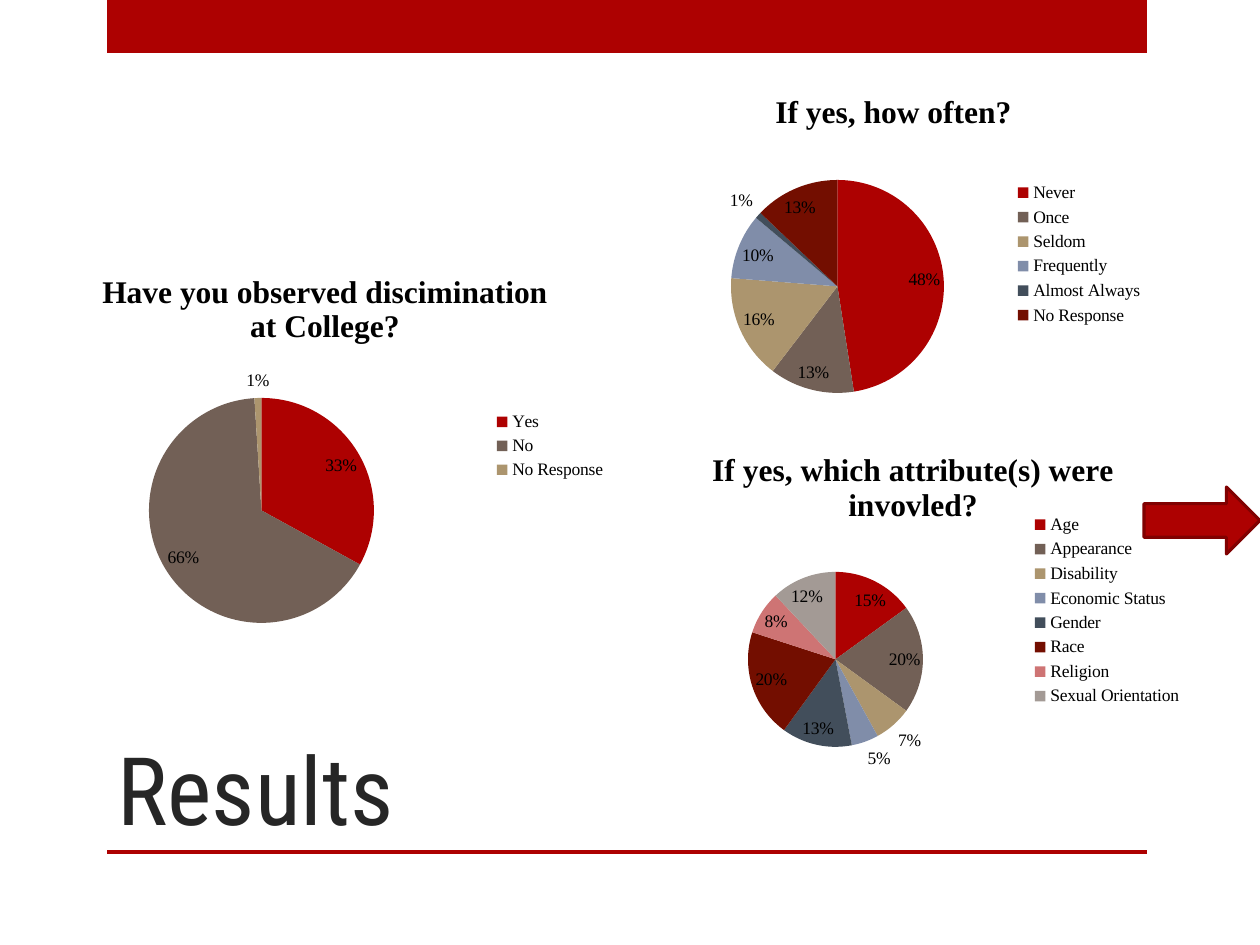
"""Build the survey results slide with three pie charts."""
from dataclasses import dataclass

import lxml.etree
import pptx
import pptx.chart.data
import pptx.dml.color
import pptx.enum.chart
import pptx.enum.shapes
import pptx.enum.text
import pptx.oxml.ns
import pptx.util

RGBColor = pptx.dml.color.RGBColor
RED = RGBColor(0xAD, 0x01, 0x01)
DARK_RED = RGBColor(0x80, 0x01, 0x01)
INK = RGBColor(0x26, 0x26, 0x26)
BLACK = RGBColor(0, 0, 0)
SLICES = (
    RED,
    RGBColor(0x72, 0x60, 0x56),
    RGBColor(0xAC, 0x95, 0x6E),
    RGBColor(0x80, 0x8D, 0xA9),
    RGBColor(0x42, 0x4E, 0x5B),
    RGBColor(0x73, 0x0E, 0x00),
    RGBColor(0xCE, 0x74, 0x74),
    RGBColor(0xA3, 0x9A, 0x95),
)
TITLE_FONT = "Roboto Condensed"
CHART_FONT = "Times New Roman"
PX_PER_INCH = 126


@dataclass(frozen=True)
class Box:
    """A rectangle in px."""

    x: int
    y: int
    w: int
    h: int


@dataclass(frozen=True)
class Pie:
    """A survey question with its answers and the places of its parts."""

    question: str
    answers: dict[str, int]
    frame: Box
    plot: Box
    legend: Box


PIES = (
    Pie(
        "Have you observed discimination at College?",
        {"Yes": 33, "No": 66, "No Response": 1},
        Box(31, 252, 588, 388), Box(149, 398, 225, 225), Box(490, 408, 120, 76),
    ),
    Pie(
        "If yes, how often?",
        {"Never": 48, "Once": 13, "Seldom": 16, "Frequently": 10,
         "Almost Always": 1, "No Response": 13},
        Box(630, 73, 527, 362), Box(731, 180, 213, 213), Box(1009, 178, 140, 152),
    ),
    Pie(
        "If yes, which attribute(s) were invovled?",
        {"Age": 15, "Appearance": 20, "Disability": 7, "Economic Status": 5,
         "Gender": 13, "Race": 20, "Religion": 8, "Sexual Orientation": 12},
        Box(630, 431, 566, 360), Box(748, 572, 175, 175), Box(1027, 510, 160, 201),
    ),
)


def emu(px: int) -> pptx.util.Emu:
    """Turn px into EMU."""
    return pptx.util.Emu(round(px * 914400 / PX_PER_INCH))


def place(box: Box) -> tuple[pptx.util.Emu, ...]:
    """Return left, top, width and height in EMU."""
    return emu(box.x), emu(box.y), emu(box.w), emu(box.h)


def add_block(s, kind, box: Box, line: RGBColor | None = None) -> None:
    """Add a red shape, outlined when a line colour is given."""
    sp = s.shapes.add_shape(kind, *place(box))
    sp.shadow.inherit = False
    sp.fill.solid()
    sp.fill.fore_color.rgb = RED
    if line is None:
        sp.line.fill.background()
    else:
        sp.line.color.rgb = line
        sp.line.width = pptx.util.Pt(1.75)


def set_layout(parent, index: int, part: Box, frame: Box, inner: bool = False) -> None:
    """Fix a chart part at its place within the chart frame."""
    qn = pptx.oxml.ns.qn
    for old in parent.findall(qn("c:layout")):
        parent.remove(old)
    layout = lxml.etree.Element(qn("c:layout"))
    manual = lxml.etree.SubElement(layout, qn("c:manualLayout"))
    values = {
        "xMode": "edge",
        "yMode": "edge",
        "x": (part.x - frame.x) / frame.w,
        "y": (part.y - frame.y) / frame.h,
        "w": part.w / frame.w,
        "h": part.h / frame.h,
    }
    if inner:
        values = {"layoutTarget": "inner", **values}
    for tag, value in values.items():
        lxml.etree.SubElement(manual, qn(f"c:{tag}")).set("val", str(value))
    parent.insert(index, layout)


def add_pie(s, pie: Pie) -> None:
    """Add a pie chart with title, legend and percent labels."""
    data = pptx.chart.data.CategoryChartData()
    data.categories = list(pie.answers)
    data.add_series("Series 1", list(pie.answers.values()))
    chart = s.shapes.add_chart(
        pptx.enum.chart.XL_CHART_TYPE.PIE, *place(pie.frame), data
    ).chart
    chart.font.name = CHART_FONT
    chart.font.size = pptx.util.Pt(10)
    chart.font.color.rgb = BLACK

    chart.has_title = True
    tf = chart.chart_title.text_frame
    tf.text = pie.question
    font = tf.paragraphs[0].runs[0].font
    font.name, font.size, font.bold = CHART_FONT, pptx.util.Pt(18), True
    font.color.rgb = BLACK

    chart.has_legend = True
    chart.legend.position = pptx.enum.chart.XL_LEGEND_POSITION.RIGHT
    chart.legend.include_in_layout = False

    plot = chart.plots[0]
    plot.vary_by_categories = True
    for i, color in enumerate(SLICES[:len(pie.answers)]):
        fill = plot.series[0].points[i].format.fill
        fill.solid()
        fill.fore_color.rgb = color
    plot.has_data_labels = True
    labels = plot.data_labels
    labels.show_value = False
    labels.show_percentage = True
    labels.number_format = "0%"
    labels.number_format_is_linked = False
    labels.position = pptx.enum.chart.XL_LABEL_POSITION.BEST_FIT

    qn = pptx.oxml.ns.qn
    root = chart.element
    set_layout(root.find(f".//{qn('c:plotArea')}"), 0, pie.plot, pie.frame, inner=True)
    set_layout(root.find(f".//{qn('c:legend')}"), 1, pie.legend, pie.frame)


def main() -> None:
    """Build and save the slide."""
    prs = pptx.Presentation()
    prs.slide_width, prs.slide_height = emu(1260), emu(945)
    s = prs.slides.add_slide(prs.slide_layouts[5])
    shape = pptx.enum.shapes.MSO_SHAPE
    add_block(s, shape.RECTANGLE, Box(107, 0, 1040, 53))
    add_block(s, shape.RECTANGLE, Box(107, 850, 1040, 4))

    title = s.shapes.title
    title.left, title.top, title.width, title.height = place(Box(105, 630, 935, 221))
    tf = title.text_frame
    tf.text = "Results"
    tf.vertical_anchor = pptx.enum.text.MSO_ANCHOR.BOTTOM
    p = tf.paragraphs[0]
    p.alignment = pptx.enum.text.PP_ALIGN.LEFT
    r = p.runs[0]
    r.font.name, r.font.size = TITLE_FONT, pptx.util.Pt(54)
    r.font.color.rgb = INK

    for pie in PIES:
        add_pie(s, pie)
    add_block(s, shape.RIGHT_ARROW, Box(1144, 487, 116, 67), DARK_RED)
    prs.save("out.pptx")


if __name__ == "__main__":
    main()
